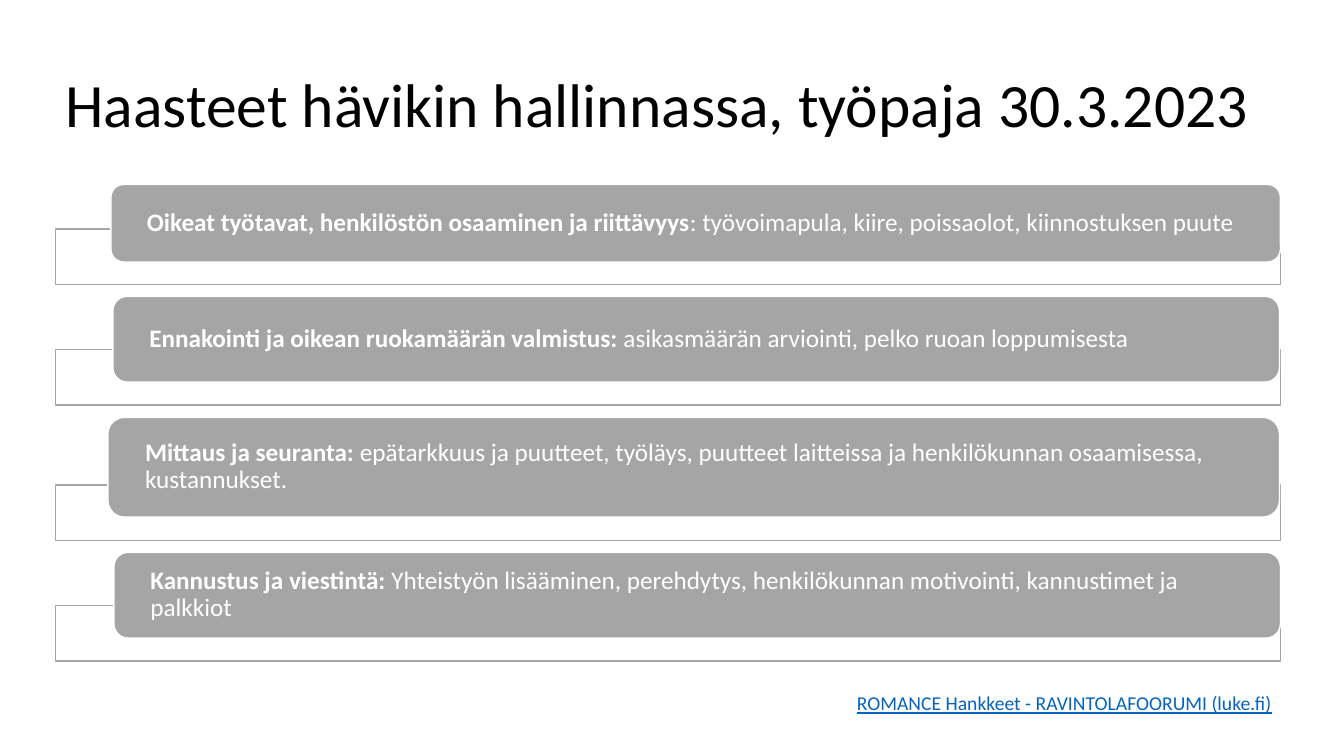
from lxml import etree
from pptx import Presentation
from pptx.dml.color import RGBColor
from pptx.enum import shapes, text
from pptx.oxml.ns import qn
from pptx.util import Inches, Pt

# Content
TITLE = "Haasteet hävikin hallinnassa, työpaja 30.3.2023"
LINK = "ROMANCE Hankkeet - RAVINTOLAFOORUMI (luke.fi)"
# bold lead, detail, bar left, top, width, height, frame top
ROWS = [
    ("Oikeat työtavat, henkilöstön osaaminen ja riittävyys",
     ": työvoimapula, kiire, poissaolot, kiinnostuksen puute",
     1.1, 1.83, 11.6, 0.77, 2.27),
    ("Ennakointi ja oikean ruokamäärän valmistus: ",
     "asikasmäärän arviointi, pelko ruoan loppumisesta",
     1.12, 2.94, 11.57, 0.85, 3.47),
    ("Mittaus ja seuranta: ",
     "epätarkkuus ja puutteet, työläys, puutteet laitteissa ja "
     "henkilökunnan osaamisessa, kustannukset.",
     1.07, 4.14, 11.62, 0.99, 4.81),
    ("Kannustus ja viestintä: ",
     "Yhteistyön lisääminen, perehdytys, henkilökunnan motivointi, "
     "kannustimet ja palkkiot",
     1.13, 5.48, 11.57, 0.85, 6.01),
]
LEFT, WIDE, FRAME = 0.55, 12.15, 0.55
WHITE, GREY, BLACK, BLUE = "FFFFFF", "A5A5A5", "000000", "0563C1"

deck = Presentation()
deck.slide_width, deck.slide_height = Inches(13.33), Inches(7.5)
slide = deck.slides.add_slide(deck.slide_layouts[6])


def paint(color, code):
    color.rgb = RGBColor.from_string(code)


def style(para, size, code):
    para.font.size = Pt(size)
    para.font.name = "Calibri"
    paint(para.font.color, code)


def block(kind, box, fill, line):
    shape = slide.shapes.add_shape(kind, *map(Inches, box))
    shape.shadow.inherit = False
    shape.fill.solid()
    paint(shape.fill.fore_color, fill)
    paint(shape.line.color, line)
    shape.line.width = Pt(1)
    return shape


def label(box, words, size, code):
    frame = slide.shapes.add_textbox(*map(Inches, box)).text_frame
    frame.word_wrap = True
    para = frame.paragraphs[0]
    para.text = words
    style(para, size, code)
    return frame


# Title
head = label((LEFT, 0.55, WIDE, 1.03), TITLE, 44, BLACK)
head.vertical_anchor = text.MSO_ANCHOR.MIDDLE
head.paragraphs[0].line_spacing = 0.9

# Outlined frames with a grey bar over each
for lead, detail, left, top, width, height, low in ROWS:
    frame = block(shapes.MSO_SHAPE.RECTANGLE, (LEFT, low, WIDE, FRAME),
                  WHITE, GREY)
    tint = frame.fill._xPr.find(qn("a:solidFill"))[0]
    etree.SubElement(tint, qn("a:alpha"), val="90000")

    bar = block(shapes.MSO_SHAPE.ROUNDED_RECTANGLE,
                (left, top, width, height), GREY, WHITE)
    body = bar.text_frame
    body.word_wrap = True
    body.vertical_anchor = text.MSO_ANCHOR.MIDDLE
    body.margin_left = body.margin_right = Inches(0.32)
    body.margin_top = body.margin_bottom = 0
    para = body.paragraphs[0]
    para.alignment = text.PP_ALIGN.LEFT
    para.line_spacing = 0.9
    for words, bold in ((lead, True), (detail, False)):
        run = para.add_run()
        run.text = words
        run.font.bold = bold
    style(para, 18, WHITE)

# Source line
foot = label((8.4, 6.81, 4.36, 0.57), LINK, 14, BLUE)
foot.paragraphs[0].font.underline = True

deck.save("out.pptx")
